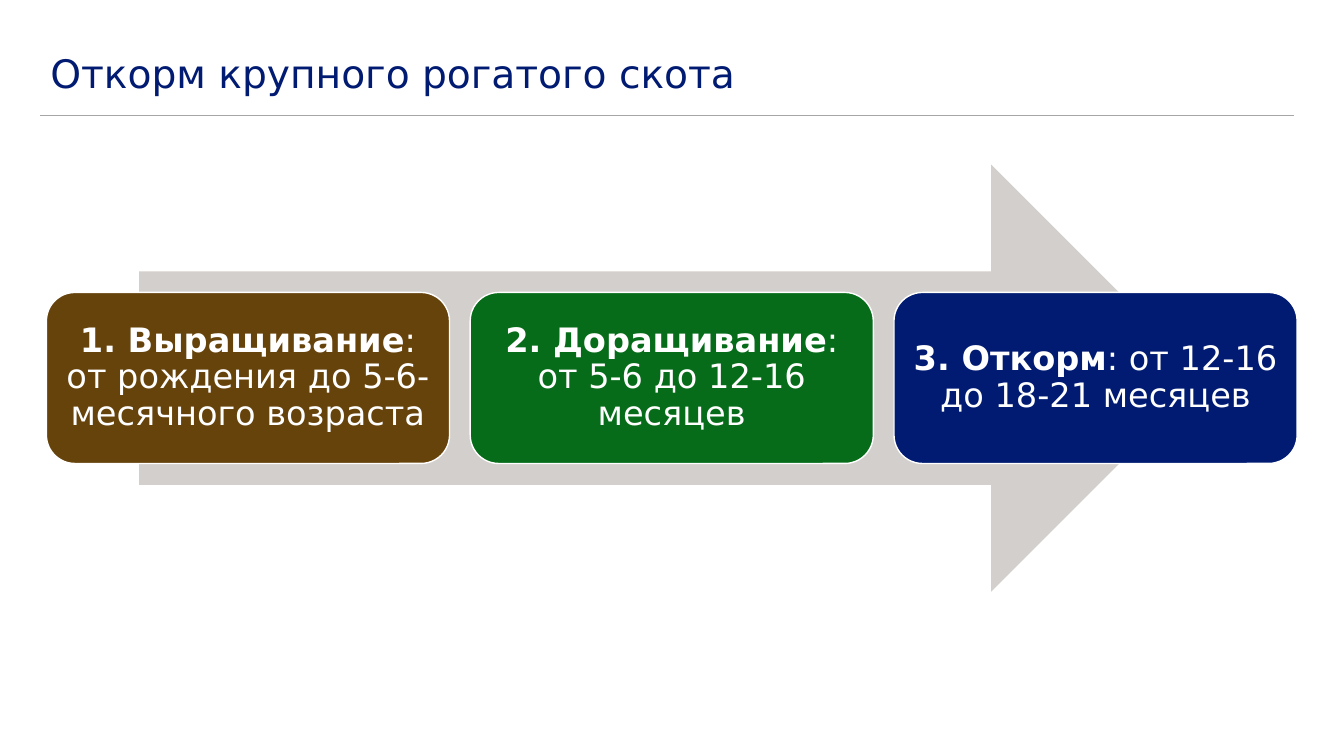
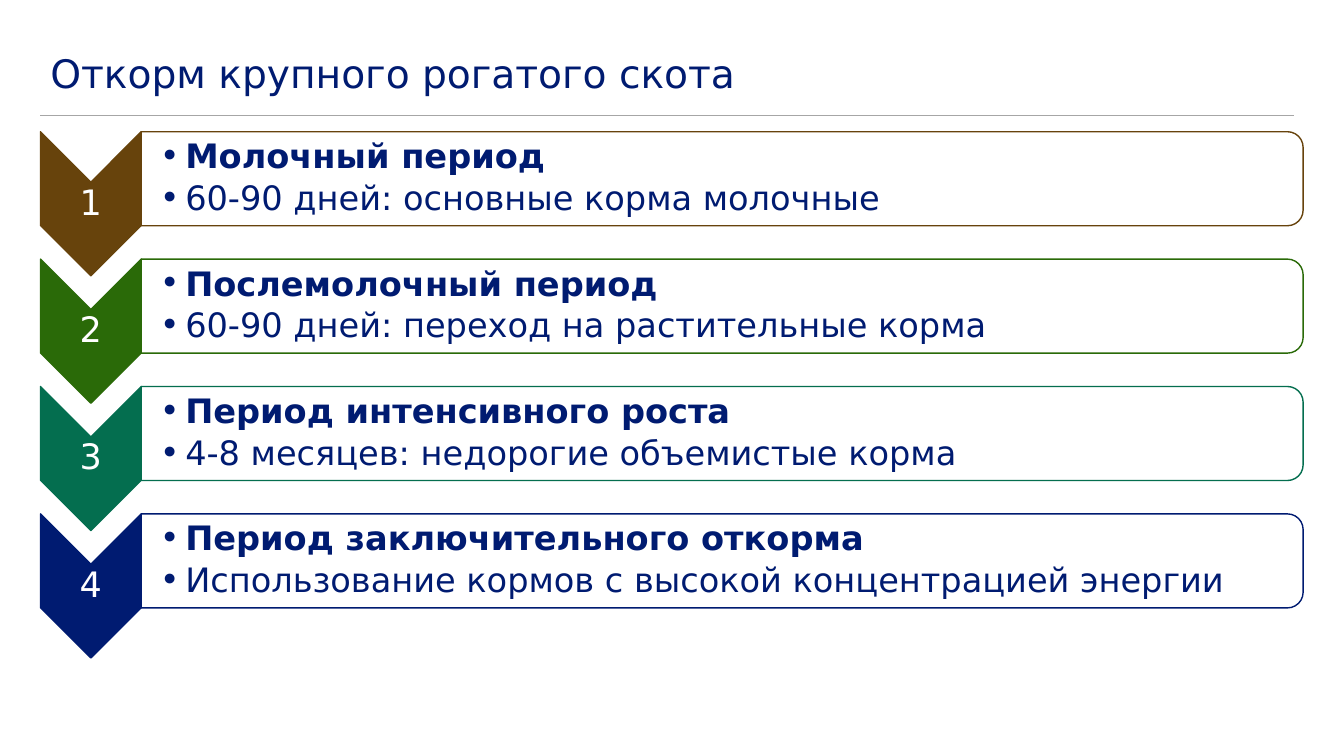
import lxml.etree
import pptx
import pptx.dml.color
import pptx.enum.shapes
import pptx.enum.text
import pptx.oxml.ns
import pptx.util

Cm = pptx.util.Cm
Pt = pptx.util.Pt
RGB = pptx.dml.color.RGBColor
SHAPE = pptx.enum.shapes.MSO_SHAPE
ALIGN = pptx.enum.text.PP_ALIGN
MIDDLE = pptx.enum.text.MSO_ANCHOR.MIDDLE

FONT = "DejaVu Sans"
NAVY = RGB(0x00, 0x1B, 0x71)
BROWN = RGB(0x67, 0x43, 0x0C)
GREEN = RGB(0x06, 0x6C, 0x19)
LEAF = RGB(0x2A, 0x6A, 0x08)
TEAL = RGB(0x04, 0x6E, 0x4F)
SAND = RGB(0xD3, 0xCF, 0xCC)
GREY = RGB(0xA6, 0xA6, 0xA6)
WHITE = RGB(0xFF, 0xFF, 0xFF)

TITLE = "Откорм крупного рогатого скота"
STAGES = [
    ("1. Выращивание", ": от рождения до 5-6-месячного возраста", BROWN),
    ("2. Доращивание", ": от 5-6 до 12-16 месяцев", GREEN),
    ("3. Откорм", ": от 12-16 до 18-21 месяцев", NAVY),
]
PERIODS = [
    ("Молочный период", "60-90 дней: основные корма молочные", BROWN),
    ("Послемолочный период", "60-90 дней: переход на растительные корма", LEAF),
    ("Период интенсивного роста", "4-8 месяцев: недорогие объемистые корма", TEAL),
    ("Период заключительного откорма",
     "Использование кормов с высокой концентрацией энергии", NAVY),
]

TITLE_STYLE = {"name": FONT, "size": Pt(28), "color": NAVY, "bold": False}
STAGE_STYLE = {"name": FONT, "size": Pt(24), "color": WHITE}
NUMBER_STYLE = {"name": FONT, "size": Pt(25), "color": WHITE}
PERIOD_STYLE = {"name": FONT, "size": Pt(24), "color": NAVY}

LEFT, WIDTH = Cm(1.02), Cm(31.6)


def add_span(para, text, style, **extra):
    span = para.add_run()
    span.text = text
    for name, value in {**style, **extra}.items():
        if name == "color":
            span.font.color.rgb = value
        else:
            setattr(span.font, name, value)


def set_frame(shape, inset, left=None):
    frame = shape.text_frame
    values = {"word_wrap": True, "vertical_anchor": MIDDLE,
              "auto_size": pptx.enum.text.MSO_AUTO_SIZE.NONE,
              "margin_left": inset if left is None else left,
              "margin_right": inset, "margin_top": inset, "margin_bottom": inset}
    for name, value in values.items():
        setattr(frame, name, value)
    return frame


def set_para(para, align):
    for name, value in {"alignment": align, "line_spacing": 0.9}.items():
        setattr(para, name, value)


def add_figure(page, kind, box, fill, line=None):
    shape = page.shapes.add_shape(kind, *box)
    shape.shadow.inherit = False
    shape.fill.solid()
    shape.fill.fore_color.rgb = fill
    if line is None:
        shape.line.fill.background()
    else:
        shape.line.color.rgb = line
        shape.line.width = Pt(1)
    return shape


def add_upright(page, kind, box, fill, line):
    left, top, width, height = box
    shift = (width - height) // 2
    shape = add_figure(page, kind, (left + shift, top - shift, height, width), fill, line)
    shape.rotation = 90


def add_bullet(para):
    properties = para._p.get_or_add_pPr()
    indent = Cm(0.64)
    properties.set("marL", str(indent))
    properties.set("indent", str(-indent))
    for tag, name, value in (("a:buFont", "typeface", FONT), ("a:buChar", "char", "•")):
        lxml.etree.SubElement(properties, pptx.oxml.ns.qn(tag)).set(name, value)


def add_page(deck):
    page = deck.slides.add_slide(deck.slide_layouts[5])
    rule = page.shapes.add_connector(
        pptx.enum.shapes.MSO_CONNECTOR.STRAIGHT, LEFT, Cm(2.9), LEFT + WIDTH, Cm(2.9))
    rule.line.color.rgb = GREY
    rule.line.width = Pt(0.75)
    lxml.etree.SubElement(rule._element.spPr, pptx.oxml.ns.qn("a:effectLst"))
    title = page.shapes.title
    title.left, title.top, title.width, title.height = LEFT, Cm(1.14), WIDTH, Cm(1.52)
    para = set_frame(title, Cm(0.13), Cm(0.25)).paragraphs[0]
    set_para(para, ALIGN.LEFT)
    add_span(para, TITLE, TITLE_STYLE)
    return page


def build_stages(deck):
    page = add_page(deck)
    add_figure(page, SHAPE.RIGHT_ARROW, (Cm(3.51), Cm(4.15), Cm(26.85), Cm(10.76)), SAND)
    width, gap = Cm(10.16), Cm(0.52)
    for index, (name, ages, color) in enumerate(STAGES):
        left = Cm(1.17) + index * (width + gap)
        box = add_figure(page, SHAPE.ROUNDED_RECTANGLE,
                         (left, Cm(7.37), width, Cm(4.31)), color, WHITE)
        para = set_frame(box, Cm(0.25)).paragraphs[0]
        set_para(para, ALIGN.CENTER)
        add_span(para, name, STAGE_STYLE, bold=True)
        add_span(para, ages, STAGE_STYLE, bold=False)


def build_periods(deck):
    page = add_page(deck)
    chevron_width, chevron_height = Cm(2.54), Cm(3.63)
    panel_left, panel_width, panel_height = LEFT + chevron_width, Cm(29.28), Cm(2.37)
    for index, (name, feed, color) in enumerate(PERIODS):
        top = Cm(3.32) + index * Cm(3.21)
        chevron = (LEFT, top, chevron_width, chevron_height)
        panel = (panel_left, top, panel_width, panel_height)
        add_upright(page, SHAPE.CHEVRON, chevron, color, color)
        number = page.shapes.add_textbox(*chevron)
        para = set_frame(number, Cm(0.05)).paragraphs[0]
        set_para(para, ALIGN.CENTER)
        add_span(para, str(index + 1), NUMBER_STYLE)
        add_upright(page, SHAPE.ROUND_2_SAME_RECTANGLE, panel, WHITE, color)
        frame = set_frame(page.shapes.add_textbox(*panel), Cm(0.05), Cm(0.47))
        for para, text, bold in ((frame.paragraphs[0], name, True),
                                 (frame.add_paragraph(), feed, False)):
            add_bullet(para)
            set_para(para, ALIGN.LEFT)
            add_span(para, text, PERIOD_STYLE, bold=bold)
        frame.paragraphs[0].space_after = Pt(4)


def main():
    deck = pptx.Presentation()
    deck.slide_width, deck.slide_height = Cm(33.87), Cm(19.05)
    build_stages(deck)
    build_periods(deck)
    deck.save("out.pptx")


if __name__ == "__main__":
    main()
